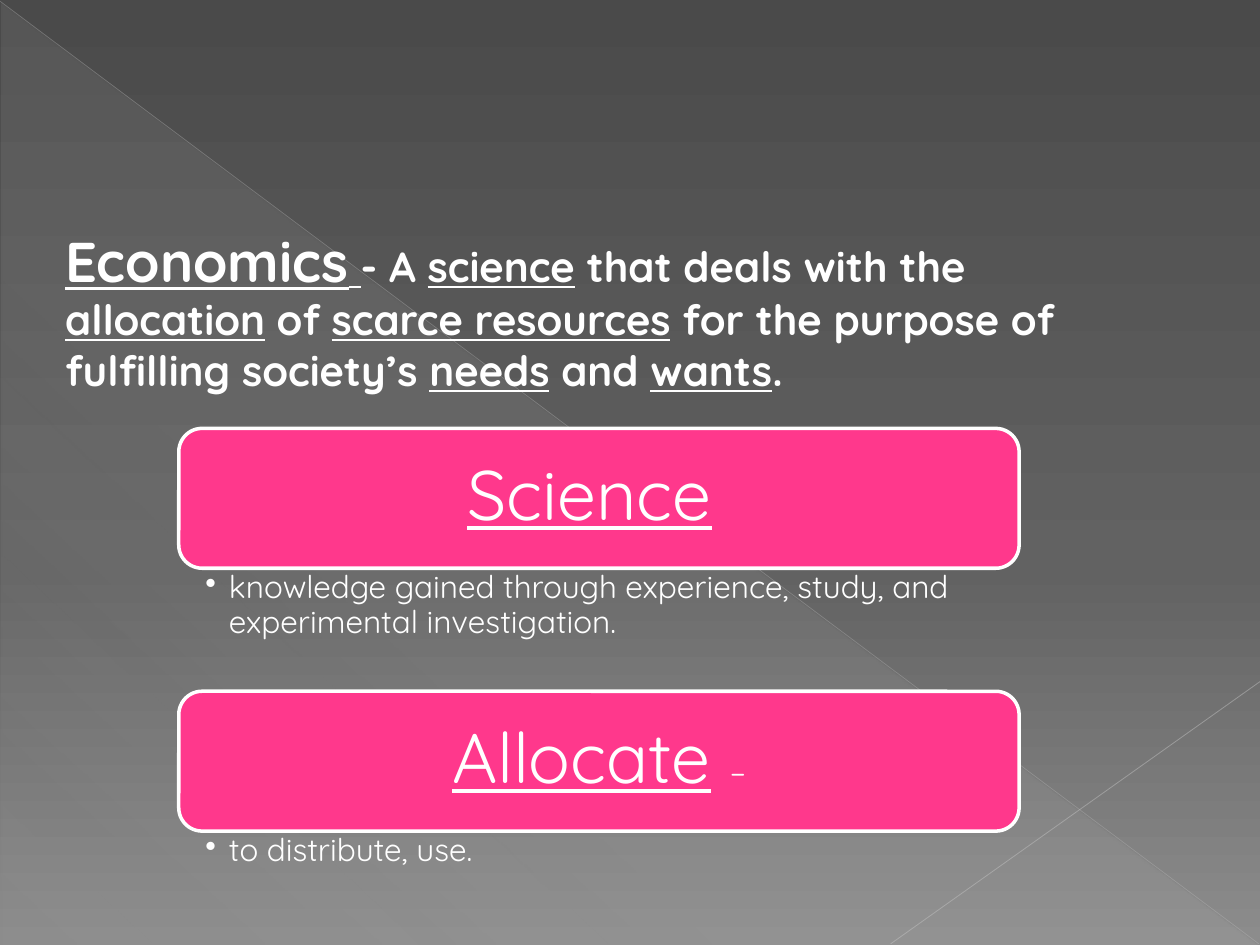
from dataclasses import dataclass

from lxml import etree
from pptx import Presentation
from pptx.dml.color import RGBColor
from pptx.enum import shapes as sh, text as tx
from pptx.oxml import ns
from pptx.util import Pt

HUES = {"white": "FFFFFF", "pink": "FF388C", "dark": "4A4A4A", "mid": "626262",
        "light": "8C8C8C", "veil": "D2D2D2", "ray": "BFBFBF", "beam": "C6C6C6"}
FONT = "Quicksand"
LEFT, WIDTH = 102.2, 480.2      # cards and the notes under them
CARD, NOTE = 79.9, 70.6         # their heights
TOP, STEP, INSET = 244.8, 150.2, 3.9


@dataclass
class Span:
    text: str
    size: float | None = None
    under: bool = False
    bold: bool | None = None


@dataclass
class Term:
    spans: list[Span]
    note: str


@dataclass
class Ray:
    start: tuple[float, float]
    end: tuple[float, float]
    hue: str
    width: float
    alpha: int


RAYS = [Ray((0, 0.7), (719.3, 539.3), "ray", 0.39, 35),
        Ray((720, 389.5), (509, 539.3), "beam", 0.47, 45)]

HEAD = [Span("Economics", 32, True), Span(" ", under=True), Span("- A "),
        Span("science", under=True), Span(" that deals with the "),
        Span("allocation", under=True), Span(" ", bold=False), Span("of "),
        Span("scarce resources", under=True),
        Span(" for the purpose of fulfilling society’s "),
        Span("needs", under=True), Span(" and "),
        Span("wants", under=True), Span(".")]

TERMS = [Term([Span("Science", under=True), Span("  ", 20)],
              "knowledge gained through experience, study, and "
              "experimental investigation."),
         Term([Span("Allocate", under=True), Span(" "), Span("–", 18)],
              "to distribute, use.")]


def rgb(hue: str) -> RGBColor:
    return RGBColor.from_string(HUES[hue])


def add(root, tag: str, **attrs):
    return etree.SubElement(root, ns.qn(tag), {k: str(v) for k, v in attrs.items()})


def blend(fill, root, stops: list[tuple[int, str, int]], angle: int) -> None:
    """Set a linear gradient of (place, hue, opacity) stops, in percent."""
    fill.gradient()
    grad = next(root.iter(ns.qn("a:gradFill")))
    for kid in list(grad):
        grad.remove(kid)
    seq = add(grad, "a:gsLst")
    for place, hue, alpha in stops:
        tone = add(add(seq, "a:gs", pos=place * 1000), "a:srgbClr", val=HUES[hue])
        if alpha < 100:
            add(tone, "a:alpha", val=alpha * 1000)
    add(grad, "a:lin", ang=angle * 60000, scaled=0)


def draw_ray(slide, ray: Ray) -> None:
    ends = [Pt(v) for v in ray.start + ray.end]
    line = slide.shapes.add_connector(sh.MSO_CONNECTOR.STRAIGHT, *ends)
    line.line.width = Pt(ray.width)
    line.line.color.rgb = rgb(ray.hue)
    props = line._element.spPr
    add(next(props.iter(ns.qn("a:srgbClr"))), "a:alpha", val=ray.alpha * 1000)
    add(props, "a:effectLst")


def add_box(slide, area: tuple, pads: tuple):
    frame = slide.shapes.add_textbox(*[Pt(v) for v in area]).text_frame
    frame.word_wrap = True
    (frame.margin_left, frame.margin_top,
     frame.margin_right, frame.margin_bottom) = [Pt(v) for v in pads]
    return frame


def write(para, spans: list[Span], size: float, bold: bool = False) -> None:
    font = para.font
    font.name, font.size, font.bold = FONT, Pt(size), bold
    font.color.rgb = rgb("white")
    for span in spans:
        run = para.add_run()
        run.text = span.text
        if span.under:
            run.font.underline = True
        if span.size:
            run.font.size = Pt(span.size)
        if span.bold is not None:
            run.font.bold = span.bold


def draw_term(slide, term: Term, top: float) -> None:
    # Card
    card = slide.shapes.add_shape(sh.MSO_SHAPE.ROUNDED_RECTANGLE, Pt(LEFT), Pt(top),
                                  Pt(WIDTH), Pt(CARD))
    card.shadow.inherit = False
    card.fill.solid()
    card.fill.fore_color.rgb = rgb("pink")
    card.line.color.rgb = rgb("white")
    card.line.width = Pt(2)

    # Term
    area = (LEFT + INSET, top + INSET, WIDTH - 2 * INSET, CARD - 2 * INSET)
    frame = add_box(slide, area, (12, 12, 12, 12))
    frame.vertical_anchor = tx.MSO_ANCHOR.MIDDLE
    para = frame.paragraphs[0]
    para.alignment = tx.PP_ALIGN.CENTER
    para.line_spacing = 0.9
    write(para, term.spans, 40)

    # Bulleted meaning
    frame = add_box(slide, (LEFT, top + CARD, WIDTH, NOTE), (15.2, 2, 10, 2))
    para = frame.paragraphs[0]
    para.level = 1
    para.line_spacing = 0.9
    props = para._p.get_or_add_pPr()
    props.set("marL", str(Pt(13.5)))
    props.set("indent", str(-Pt(13.5)))
    add(props, "a:buChar", char="•")
    write(para, [Span(term.note)], 18)


def main() -> None:
    deck = Presentation()
    deck.slide_width, deck.slide_height = Pt(720), Pt(540)
    slide = deck.slides.add_slide(deck.slide_layouts[6])

    # Backdrop
    blend(slide.background.fill, slide._element,
          [(0, "dark", 100), (60, "mid", 100), (100, "light", 100)], 90)
    veil = slide.shapes.add_shape(sh.MSO_SHAPE.RIGHT_TRIANGLE, Pt(0.7), Pt(1.4),
                                  Pt(718.6), Pt(538.6))
    veil.shadow.inherit = False
    veil.line.fill.background()
    blend(veil.fill, veil._element,
          [(0, "veil", 10), (70, "veil", 8), (100, "veil", 1)], 133)
    for ray in RAYS:
        draw_ray(slide, ray)

    # Definition
    frame = add_box(slide, (30.2, 126, 635.8, 104.4), (7.2, 3.6, 7.2, 3.6))
    frame.auto_size = tx.MSO_AUTO_SIZE.SHAPE_TO_FIT_TEXT
    write(frame.paragraphs[0], HEAD, 24, True)

    # Terms
    for row, term in enumerate(TERMS):
        draw_term(slide, term, TOP + row * STEP)

    deck.save("out.pptx")


if __name__ == "__main__":
    main()
